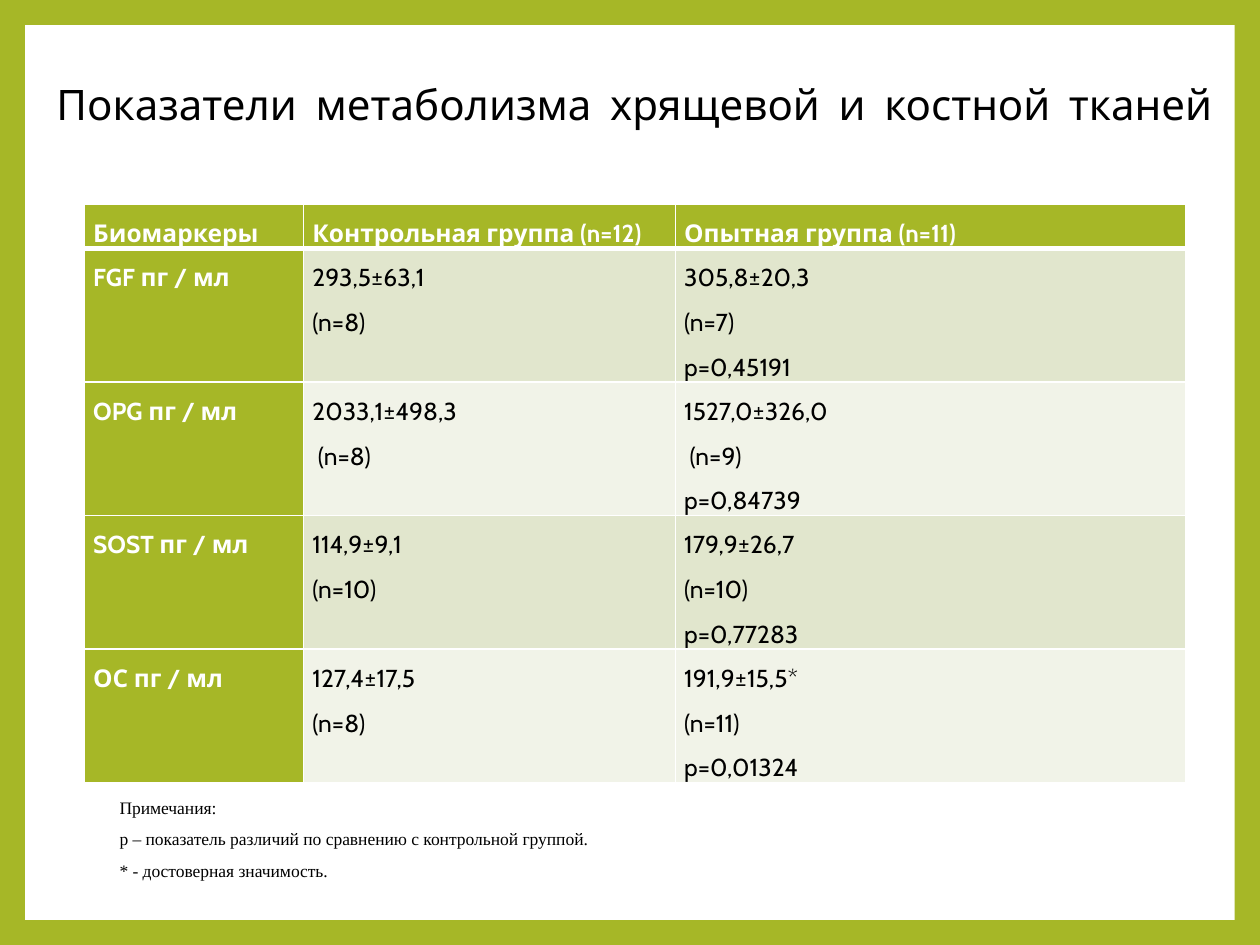
from lxml.etree import SubElement
from pptx import Presentation
from pptx.dml.color import RGBColor
from pptx.enum.shapes import MSO_SHAPE
from pptx.enum.text import MSO_ANCHOR, PP_ALIGN
from pptx.oxml.ns import qn
from pptx.util import Inches, Pt

WIDTH, HEIGHT = 10, 7.5
COLORS = {"green": "A6B727", "white": "FFFFFF", "black": "000000",
          "band": "E1E6CD", "pale": "F1F3E8"}
TITLE = "Показатели метаболизма хрящевой и костной тканей\v"
HEADER = ["Биомаркеры", "Контрольная группа (n=12)", "Опытная группа (n=11)"]
MARKERS = [
    ["FGF пг / мл", "293,5±63,1 \n(n=8)", "305,8±20,3\n(n=7)\np=0,45191"],
    ["OPG пг / мл", "2033,1±498,3\n (n=8)", "1527,0±326,0\n (n=9)\np=0,84739"],
    ["SOST пг / мл", "114,9±9,1\n(n=10)", "179,9±26,7\n(n=10)\np=0,77283"],
    ["ОС пг / мл", "127,4±17,5\n(n=8)", "191,9±15,5*\n(n=11)\np=0,01324"],
]
NOTES = ("Примечания: \n"
         "р – показатель различий по сравнению с контрольной группой.\n"
         "* - достоверная значимость.")


def color(name):
    """Return the named colour."""
    return RGBColor.from_string(COLORS[name])


def box(x, y, w, h):
    """Turn percentages of the slide into a left, top, width, height list."""
    return [Inches(share * side / 100)
            for share, side in zip((x, y, w, h), (WIDTH, HEIGHT) * 2)]


def write(tf, text, font, size, tint="black", bold=False, spacing=1.5):
    """Fill a text frame with justified paragraphs of one style."""
    tf.word_wrap = True
    tf.text = text
    for p in tf.paragraphs:
        p.alignment = PP_ALIGN.JUSTIFY
        p.line_spacing = spacing
        for r in p.runs:
            r.font.name = font
            r.font.size = Pt(size)
            r.font.bold = bold
            r.font.color.rgb = color(tint)


def add_panel(s):
    """Draw the white panel inside the green frame."""
    sp = s.shapes.add_shape(MSO_SHAPE.RECTANGLE, *box(2, 2.67, 96, 94.67))
    sp.shadow.inherit = False
    sp.fill.solid()
    sp.fill.fore_color.rgb = color("white")
    sp.line.fill.background()


def add_title(s):
    """Add the title, stretched across its box."""
    tf = s.shapes.add_textbox(*box(3.5, 5.87, 93.7, 19.73)).text_frame
    tf.vertical_anchor = MSO_ANCHOR.MIDDLE
    tf.margin_bottom = Inches(0.42)
    write(tf, TITLE, "Cabin", 24, spacing=0.9)


def add_border(cell, side, width):
    """Put a white line on one side of a cell."""
    ln = SubElement(cell._tc.get_or_add_tcPr(), qn(f"a:ln{side}"), w=str(Pt(width)))
    fill = SubElement(ln, qn("a:solidFill"))
    SubElement(fill, qn("a:srgbClr"), val=COLORS["white"])


def style_cell(cell, text, row, col):
    """Write a cell and style it by its place in the table."""
    head = row == 0 or col == 0
    cell.margin_left = cell.margin_right = Inches(0.07)
    cell.margin_top = cell.margin_bottom = 0
    write(cell.text_frame, text, "Cabin", 14, "white" if head else "black", head)
    thick = {(0, "B"), (1, "T")}
    for side in "LRTB":
        add_border(cell, side, 3 if (row, side) in thick else 1)
    cell.fill.solid()
    cell.fill.fore_color.rgb = color("green" if head else "band" if row % 2 else "pale")


def add_markers(s):
    """Add the table of biomarkers."""
    rows = [HEADER] + MARKERS
    table = s.shapes.add_table(len(rows), len(HEADER), *box(6.7, 21.6, 87.4, 61.2)).table
    for column, share in zip(table.columns, (17.4, 29.5, 40.5)):
        column.width = Inches(share * WIDTH / 100)
    for i, texts in enumerate(rows):
        table.rows[i].height = Inches(1.06 if i else 0.33)
        for j, text in enumerate(texts):
            style_cell(table.cell(i, j), text, i, j)


def add_notes(s):
    """Add the indented notes under the table."""
    tf = s.shapes.add_textbox(*box(3.6, 82.53, 94.1, 11.07)).text_frame
    write(tf, NOTES, "Times New Roman", 10)
    for p in tf.paragraphs:
        p._p.get_or_add_pPr().set("marL", str(Inches(0.49)))


def main():
    """Build the slide and save it."""
    prs = Presentation()
    prs.slide_width, prs.slide_height = Inches(WIDTH), Inches(HEIGHT)
    s = prs.slides.add_slide(prs.slide_layouts[6])
    s.background.fill.solid()
    s.background.fill.fore_color.rgb = color("green")
    add_panel(s)
    add_title(s)
    add_markers(s)
    add_notes(s)
    prs.save("out.pptx")


if __name__ == "__main__":
    main()
